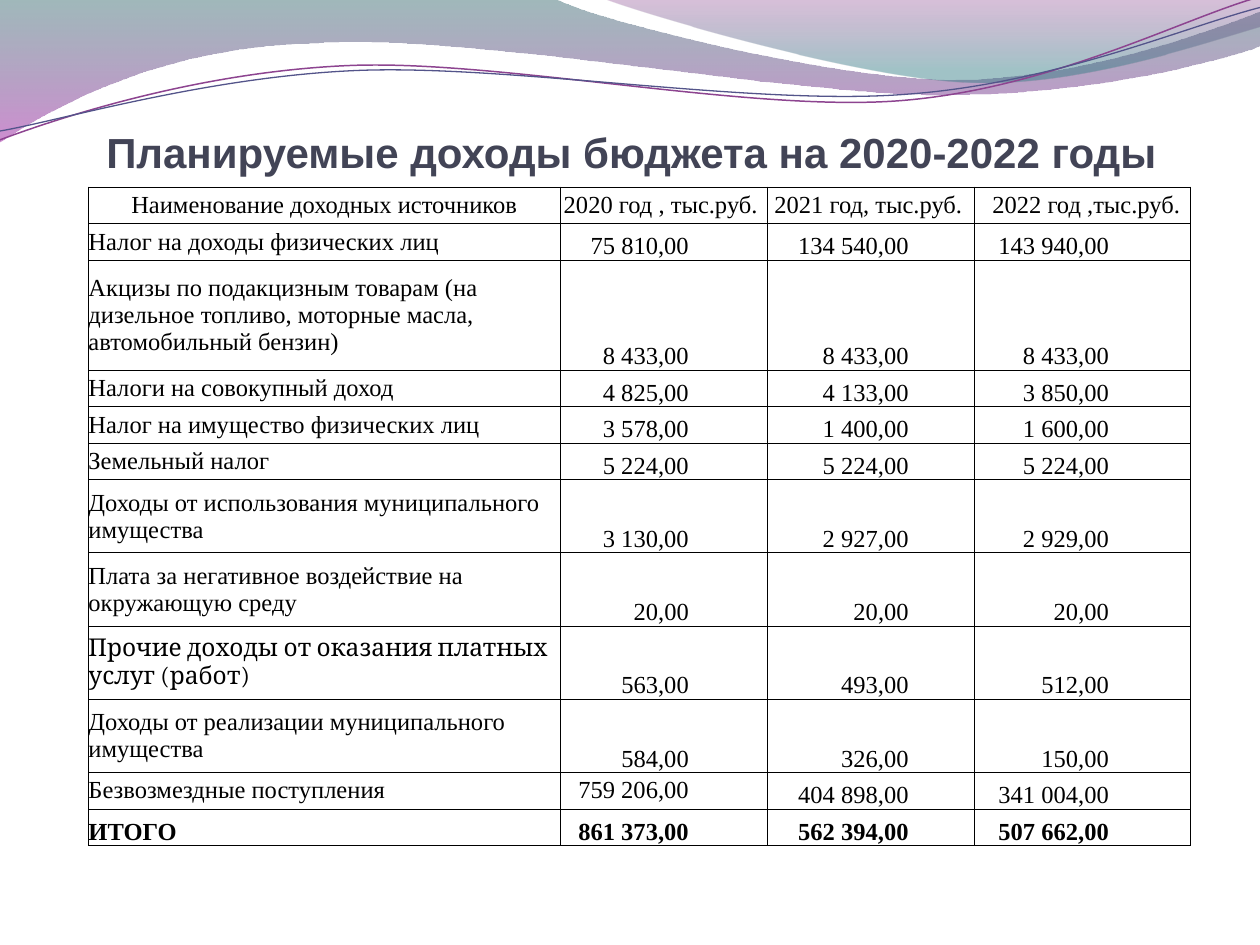
from math import cos, radians, sin
from lxml.etree import SubElement
from pptx import Presentation
from pptx.dml.color import RGBColor
from pptx.enum.text import MSO_ANCHOR, PP_ALIGN
from pptx.oxml.ns import qn
from pptx.util import Inches, Pt

WIDTH, HEIGHT = 10, 7.5
TILT = 2.7
UNIT = 69.73 / 18
COLS = [37.45, 16.45, 16.4, 17.2]
PADS = [0, 6.25, 5.2, 6.5]
SHIFTS = [(0, 0), (0, 0.5), (0, 0.4), (0.6, 0)]
COLORS = {
    "title": "424456", "ink": "000000", "teal": "2D6368", "pink": "A530A9",
    "plum": "7F2F82", "aqua": "2F7B82", "violet": "8D4490", "indigo": "53548A",
}
HEADS = ["Наименование доходных источников", "2020 год , тыс.руб.",
         "2021 год, тыс.руб.", "2022 год ,тыс.руб."]
ROWS = [
    (1, "Налог на доходы физических лиц", "75 810,00", "134 540,00", "143 940,00"),
    (3, "Акцизы по подакцизным товарам (на дизельное топливо, моторные масла, "
        "автомобильный бензин)", "8 433,00", "8 433,00", "8 433,00"),
    (1, "Налоги на совокупный доход", "4 825,00", "4 133,00", "3 850,00"),
    (1, "Налог на имущество физических лиц", "3 578,00", "1 400,00", "1 600,00"),
    (1, "Земельный налог", "5 224,00", "5 224,00", "5 224,00"),
    (2, "Доходы от использования муниципального имущества",
     "3 130,00", "2 927,00", "2 929,00"),
    (2, "Плата за негативное воздействие на окружающую среду",
     "20,00", "20,00", "20,00"),
    (2, "Прочие доходы от оказания платных услуг (работ)",
     "563,00", "493,00", "512,00"),
    (2, "Доходы от реализации муниципального имущества",
     "584,00", "326,00", "150,00"),
    (1, "Безвозмездные поступления", "759 206,00", "404 898,00", "341 004,00"),
    (1, "ИТОГО", "861 373,00", "562 394,00", "507 662,00"),
]
BANDS = [
    ([(0, 0), (4.4, -0.01), (4.76, 0.17, 6.64, 0.63, 7.58, 0.63),
      (8.53, 0.63, 9.58, 0.26, 10, 0.09), (10.01, 0.36),
      (9.83, 0.44, 8.7, 0.76, 7.46, 0.75), (6.22, 0.75, 3.82, 0.28, 2.57, 0.34),
      (1.29, 0.36, 0.46, 0.83, -0.01, 1.13), (0, 0)],
     [(0, "teal", 45), (1, "pink", 55)]),
    ([(4.79, -0.01), (5.09, 0.11, 6.82, 0.62, 7.69, 0.65),
      (8.56, 0.69, 9.61, 0.32, 10, 0.21), (10, 0), (4.79, -0.01)],
     [(0, "plum", 30), (0.8, "aqua", 45)]),
]
WAVES = [
    ([(0, 1.11), (0.48, 0.93, 1.58, 0.57, 2.77, 0.52),
      (3.95, 0.47, 5.93, 0.89, 7.13, 0.8), (8.33, 0.71, 9.38, 0.15, 9.98, -0.02)],
     (4.99, 0.57), "violet", 0.85),
    ([(0, 1.04), (0.47, 0.96, 1.64, 0.61, 2.83, 0.56),
      (4.03, 0.51, 5.97, 0.84, 7.17, 0.75), (8.36, 0.67, 9.41, 0.21, 10, 0.06)],
     (5, 0.59), "indigo", 0.75),
]


def tint(name):
    return RGBColor.from_string(COLORS[name])


def across(share):
    return Inches(share * WIDTH / 100)


def down(share):
    return Inches(share * HEIGHT / 100)


def write(frame, text, font="Times New Roman", size=14, color="ink",
          bold=False, align=PP_ALIGN.LEFT):
    para = frame.paragraphs[0]
    para.alignment = align
    run = para.add_run()
    run.text = text
    run.font.name = font
    run.font.size = Pt(size)
    run.font.bold = bold
    run.font.color.rgb = tint(color)


def pairs(part):
    return list(zip(part[::2], part[1::2]))


def turn(spot, hub):
    angle = radians(TILT)
    x, y = spot[0] - hub[0], spot[1] - hub[1]
    return (hub[0] + x * cos(angle) - y * sin(angle),
            hub[1] + x * sin(angle) + y * cos(angle))


def bend(shape, path):
    lines = list(shape.element.iter(qn("a:lnTo")))
    for part in path[1:]:
        count = len(part) // 2
        group, lines = lines[:count], lines[count:]
        if count == 3:
            curve = group[0].makeelement(qn("a:cubicBezTo"))
            group[0].addprevious(curve)
            for line in group:
                curve.append(line[0])
                line.getparent().remove(line)


def outline(slide, path, close, hub=None):
    spots = [spot for part in path for spot in pairs(part)]
    if hub:
        spots = [turn(spot, hub) for spot in spots]
    spots = [(Inches(x), Inches(y)) for x, y in spots]
    pen = slide.shapes.build_freeform(*spots[0])
    pen.add_line_segments(spots[1:], close=close)
    shape = pen.convert_to_shape()
    bend(shape, path)
    shape.shadow.inherit = False
    return shape


def band(slide, path, stops):
    shape = outline(slide, path, True)
    shape.line.fill.background()
    shape.fill.gradient()
    shape.fill.gradient_angle = 270
    for stop, (place, name, alpha) in zip(shape.fill.gradient_stops, stops):
        stop.position = place
        stop.color.rgb = tint(name)
    for node, (place, name, alpha) in zip(shape.element.iter(qn("a:srgbClr")), stops):
        SubElement(node, qn("a:alpha"), val=str(alpha * 1000))


def wave(slide, path, hub, name, width):
    shape = outline(slide, path, False, hub)
    shape.rotation = 360 - TILT
    shape.fill.background()
    shape.line.color.rgb = tint(name)
    shape.line.width = Pt(width)


def title(slide, text):
    box = slide.shapes.add_textbox(across(4.7), down(9.36), across(90.8), down(9.33))
    frame = box.text_frame
    frame.word_wrap = True
    frame.vertical_anchor = MSO_ANCHOR.BOTTOM
    frame.margin_left = frame.margin_right = frame.margin_bottom = 0
    frame.margin_top = Inches(0.05)
    write(frame, text, font="Arial", size=24, color="title", bold=True,
          align=PP_ALIGN.CENTER)


def border(cell):
    props = cell._tc.get_or_add_tcPr()
    for side in ("lnL", "lnR", "lnT", "lnB"):
        line = SubElement(props, qn("a:" + side), w=str(Pt(0.5)))
        fill = SubElement(line, qn("a:solidFill"))
        SubElement(fill, qn("a:srgbClr"), val=COLORS["ink"])


def fill_cell(cell, text, anchor, left=0, right=0, **style):
    border(cell)
    cell.fill.background()
    cell.margin_top = cell.margin_bottom = 0
    cell.margin_left, cell.margin_right = across(left), across(right)
    cell.vertical_anchor = anchor
    write(cell.text_frame, text, **style)


def budget(slide):
    units = [1] + [row[0] for row in ROWS]
    table = slide.shapes.add_table(
        len(units), len(COLS), across(7.02), down(19.8),
        across(sum(COLS)), down(UNIT * sum(units))).table
    table.first_row = table.horz_banding = False
    for col, share in zip(table.columns, COLS):
        col.width = across(share)
    for row, count in zip(table.rows, units):
        row.height = down(UNIT * count)
    for c, (head, (left, right)) in enumerate(zip(HEADS, SHIFTS)):
        fill_cell(table.cell(0, c), head, MSO_ANCHOR.MIDDLE, left, right,
                  align=PP_ALIGN.CENTER)
    for r, (count, name, *sums) in enumerate(ROWS, 1):
        total = name == "ИТОГО"
        font = "Cambria" if name.startswith("Прочие") else "Times New Roman"
        fill_cell(table.cell(r, 0), name,
                  MSO_ANCHOR.BOTTOM if total else MSO_ANCHOR.MIDDLE,
                  font=font, bold=total)
        for c, value in enumerate(sums, 1):
            middle = c == 1 and name.startswith("Безвозмездные")
            fill_cell(table.cell(r, c), value,
                      MSO_ANCHOR.MIDDLE if middle else MSO_ANCHOR.BOTTOM,
                      right=PADS[c], bold=total, align=PP_ALIGN.RIGHT)


def main():
    deck = Presentation()
    deck.slide_width, deck.slide_height = across(100), down(100)
    slide = deck.slides.add_slide(deck.slide_layouts[6])
    for item in BANDS:
        band(slide, *item)
    for item in WAVES:
        wave(slide, *item)
    title(slide, "Планируемые доходы бюджета на 2020-2022 годы")
    budget(slide)
    deck.save("out.pptx")


if __name__ == "__main__":
    main()
